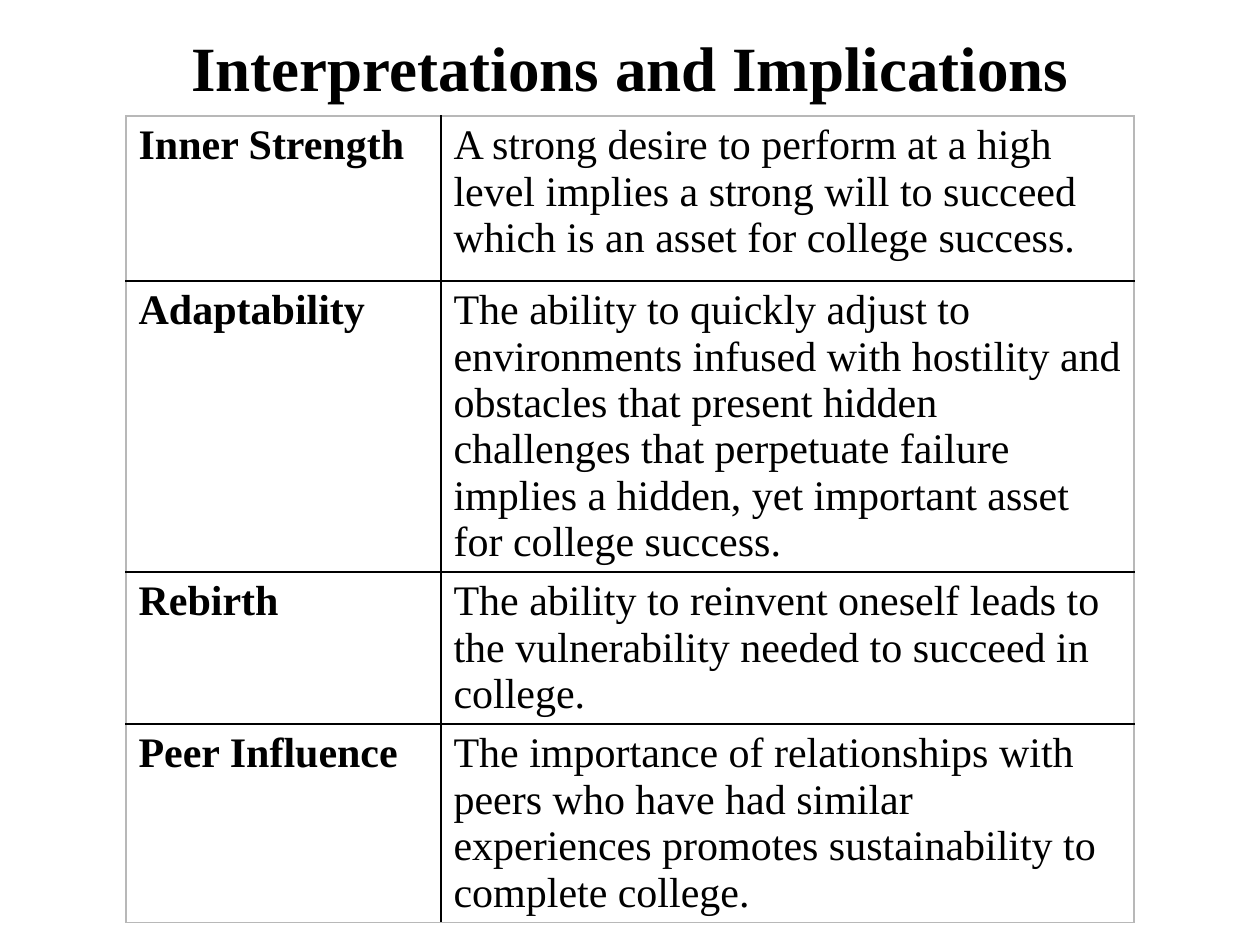
from lxml.etree import SubElement
from pptx import Presentation
from pptx.dml.color import RGBColor
from pptx.enum.text import MSO_ANCHOR, PP_ALIGN
from pptx.oxml.ns import qn
from pptx.util import Inches, Pt

BLACK = RGBColor(0, 0, 0)
WHITE = RGBColor(255, 255, 255)
GREY = RGBColor(0xB8, 0xB8, 0xB8)
FACE = "Times New Roman"
ROWS = [
    ("Inner Strength", "A strong desire to perform at a high level implies a strong will "
     "to succeed which is an asset for college success.", 1.31),
    ("Adaptability", "The ability to quickly adjust to environments infused with hostility "
     "and obstacles that present hidden challenges that perpetuate failure implies a hidden, "
     "yet important asset for college success.", 2.31),
    ("Rebirth", "The ability to reinvent oneself leads to the vulnerability needed to "
     "succeed in college.", 1.2),
    ("Peer Influence", "The importance of relationships with peers who have had similar "
     "experiences promotes sustainability to complete college.", 1.57),
]


def style(font, **extra):
    for key, value in {"name": FACE, **extra}.items():
        setattr(font, key, value)
    font.color.rgb = BLACK


def edge(cell, side, color):
    line = SubElement(cell._tc.get_or_add_tcPr(), qn("a:ln" + side), w=str(Pt(1)))
    fill = SubElement(line, qn("a:solidFill"))
    SubElement(fill, qn("a:srgbClr"), val=str(color))


def add_title(slide, box):
    title = slide.shapes.title
    for key, value in zip(("left", "top", "width", "height"), box):
        setattr(title, key, Inches(value))
    frame = title.text_frame
    frame.text = "Interpretations and Implications"
    frame.vertical_anchor = MSO_ANCHOR.MIDDLE
    para = frame.paragraphs[0]
    para.alignment = PP_ALIGN.CENTER
    style(para.runs[0].font, size=Pt(36), bold=True)


def add_grid(slide, box):
    table = slide.shapes.add_table(len(ROWS), 2, *map(Inches, box)).table
    for flag in ("first_row", "horz_banding"):
        setattr(table, flag, False)
    for col, width in zip(table.columns, (2.5, box[2] - 2.5)):
        col.width = Inches(width)
    for i, (term, text, height) in enumerate(ROWS):
        table.rows[i].height = Inches(height)
        outer = {(0, "L"), (1, "R")}
        if i == 0:
            outer |= {(0, "T"), (1, "T")}
        if i == len(ROWS) - 1:
            outer |= {(0, "B"), (1, "B")}
        for j, words in enumerate((term, text)):
            cell = table.cell(i, j)
            cell.text = words
            style(cell.text_frame.paragraphs[0].runs[0].font, size=Pt(24), bold=j == 0)
            for side in "LRTB":
                edge(cell, side, GREY if (j, side) in outer else BLACK)
            cell.fill.solid()
            cell.fill.fore_color.rgb = WHITE


def main():
    deck = Presentation()
    deck.slide_width, deck.slide_height = Inches(10), Inches(7.5)
    slide = deck.slides.add_slide(deck.slide_layouts[5])
    add_title(slide, (1, 0.25, 8, 0.55))
    add_grid(slide, (1, 0.92, 8, sum(row[2] for row in ROWS)))
    deck.save("out.pptx")


if __name__ == "__main__":
    main()
